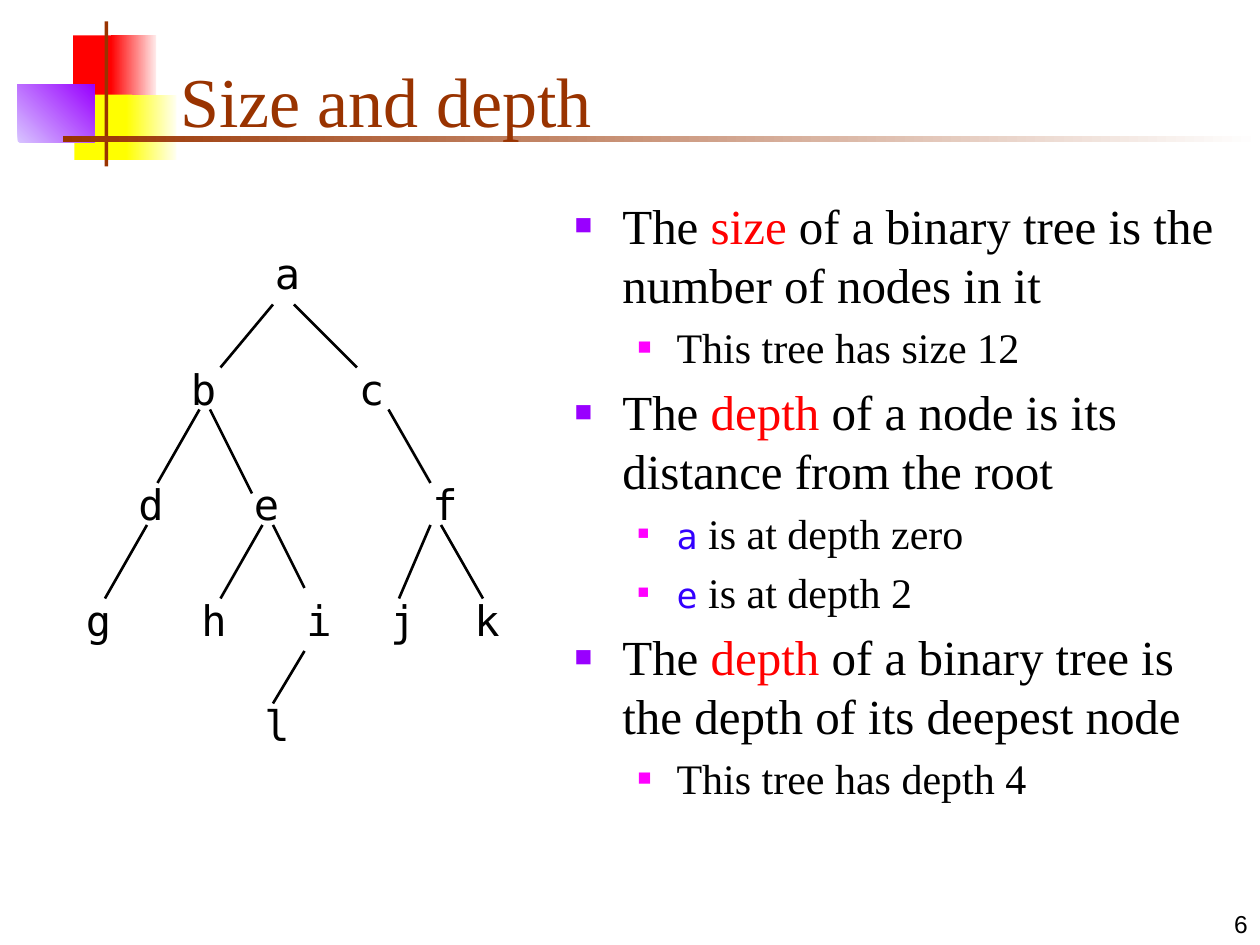
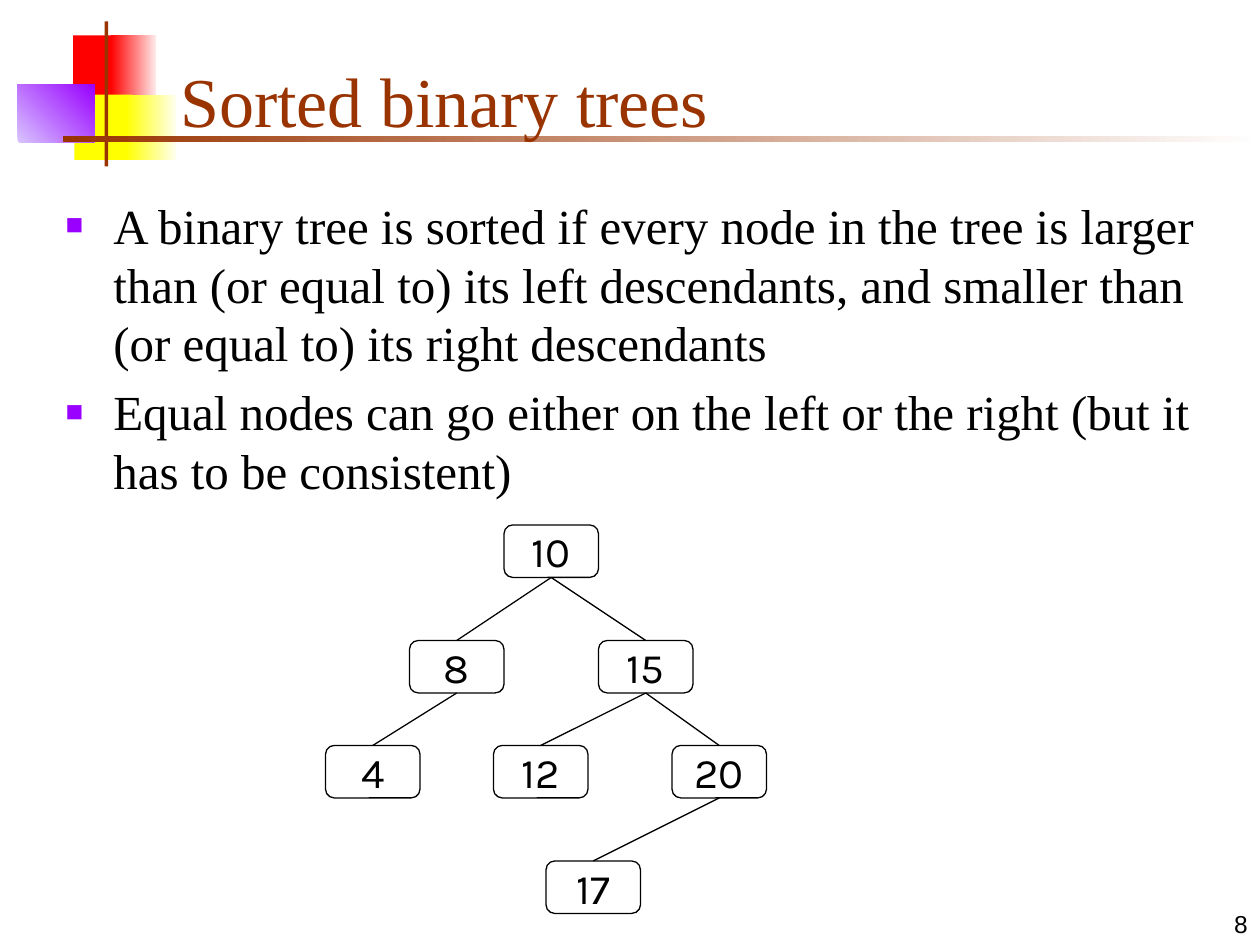
from dataclasses import dataclass

from lxml.etree import SubElement
from pptx import Presentation
from pptx.dml.color import RGBColor
from pptx.enum.shapes import MSO_CONNECTOR, MSO_SHAPE
from pptx.enum.text import MSO_ANCHOR, MSO_AUTO_SIZE, PP_ALIGN
from pptx.oxml.ns import qn
from pptx.util import Inches, Pt


@dataclass(frozen=True)
class Theme:
    text: str = "000000"
    title: str = "993300"
    keyword: str = "FF0000"
    code: str = "3300FF"
    bullets: tuple = ("9900FF", "FF00FF")
    serif: str = "Times New Roman"
    mono: str = "DejaVu Sans Mono"
    node: str = "Karla"
    number: str = "Arial"
    title_size: int = 40
    body_sizes: tuple = (28, 24)
    code_size: int = 20
    node_size: int = 24
    number_size: int = 14


THEME = Theme()

# Shared decoration: left, top, width, height, colours, gradient angle
DECORATION = [
    (0.58, 0.28, 0.35, 0.52, ["FF0000"], 0),
    (0.88, 0.28, 0.36, 0.52, ["FF0000", "FFEAEA"], 0),
    (0.59, 0.75, 0.46, 0.52, ["FFFF00"], 0),
    (1, 0.75, 0.4, 0.52, ["FFFF00", "FFFFF0"], 0),
    (0.14, 0.67, 0.61, 0.46, ["D8C4FF", "9900FF"], 45),
    (0.83, 0.17, 0.03, 1.15, [THEME.title], 0),
    (0.5, 1.08, 9.5, 0.05, [THEME.title, "FFFFFF"], 0),
]

# Lists: level, then (text, style) runs
DEPTH_POINTS = [
    (0, [("The ", "plain"), ("size", "keyword"),
         (" of a binary tree is the number of nodes in it", "plain")]),
    (1, [("This tree has size 12", "plain")]),
    (0, [("The ", "plain"), ("depth", "keyword"),
         (" of a node is its distance from the root", "plain")]),
    (1, [("a", "code"), (" is at depth zero", "plain")]),
    (1, [("e", "code"), (" is at depth 2", "plain")]),
    (0, [("The ", "plain"), ("depth", "keyword"),
         (" of a binary tree is the depth of its deepest node", "plain")]),
    (1, [("This tree has depth 4", "plain")]),
]
SORTED_POINTS = [
    (0, [("A binary tree is sorted if every node in the tree is larger than "
          "(or equal to) its left descendants, and smaller than "
          "(or equal to) its right descendants", "plain")]),
    (0, [("Equal nodes can go either on the left or the right "
          "(but it has to be consistent)", "plain")]),
]

# Trees lie on a grid of twelfths of an inch: row top -> {label: left}
LETTER_ROWS = {
    23: {"a": 25},
    34: {"b": 17, "c": 33},
    45: {"d": 12, "e": 23, "f": 40},
    56: {"g": 7, "h": 18, "i": 28, "j": 36, "k": 44},
    66: {"l": 24},
}
# Branches: start x, start y, end x, end y
LETTER_BRANCHES = [
    (26, 29, 21, 35), (28, 29, 34, 35),
    (19, 39, 15, 46), (20, 39, 24, 47), (37, 39, 41, 46),
    (14, 50, 10, 57), (25, 50, 21, 57), (26, 50, 29, 56),
    (41, 50, 38, 57), (42, 50, 46, 57), (29, 62, 26, 67),
]
NUMBER_ROWS = {
    50: {"10": 48},
    61: {"8": 39, "15": 57},
    71: {"4": 31, "12": 47, "20": 64},
    82: {"17": 52},
}
NUMBER_BRANCHES = [("10", "8"), ("10", "15"), ("8", "4"),
                   ("15", "12"), ("15", "20"), ("20", "17")]


def grid(*units):
    return [Inches(unit / 12) for unit in units]


def inches(*lengths):
    return [Inches(length) for length in lengths]


def color(value):
    return RGBColor.from_string(value)


def add_run(paragraph, text, font, size, rgb):
    run = paragraph.add_run()
    run.text = text
    run.font.name, run.font.size = font, Pt(size)
    run.font.color.rgb = color(rgb)


def place(shape, left, top, width, height):
    shape.left, shape.top, shape.width, shape.height = inches(left, top, width, height)


# Shared parts of every slide
def add_decoration(slide):
    for left, top, width, height, colors, angle in DECORATION:
        shape = slide.shapes.add_shape(
            MSO_SHAPE.RECTANGLE, *inches(left, top, width, height))
        shape.shadow.inherit = False
        shape.line.fill.background()
        if len(colors) == 1:
            shape.fill.solid()
            shape.fill.fore_color.rgb = color(colors[0])
        else:
            shape.fill.gradient()
            shape.fill.gradient_angle = angle
            for stop, value in zip(shape.fill.gradient_stops, colors):
                stop.color.rgb = color(value)


def set_bullet(paragraph, level):
    paragraph.level = level
    properties = paragraph._p.get_or_add_pPr()
    margin, hanging = [(0.38, 0.38), (0.81, 0.31)][level]
    properties.set("marL", str(Inches(margin)))
    properties.set("indent", str(-Inches(hanging)))
    bullet_color = SubElement(properties, qn("a:buClr"))
    SubElement(bullet_color, qn("a:srgbClr"), val=THEME.bullets[level])
    SubElement(properties, qn("a:buSzPct"), val=["60000", "55000"][level])
    SubElement(properties, qn("a:buFont"), typeface=THEME.number)
    SubElement(properties, qn("a:buChar"), char="■")


def fill_body(body, points):
    frame = body.text_frame
    frame.auto_size = MSO_AUTO_SIZE.NONE
    for index, (level, runs) in enumerate(points):
        paragraph = frame.add_paragraph() if index else frame.paragraphs[0]
        set_bullet(paragraph, level)
        size = THEME.body_sizes[level]
        styles = {
            "plain": (THEME.serif, size, THEME.text),
            "keyword": (THEME.serif, size, THEME.keyword),
            "code": (THEME.mono, THEME.code_size, THEME.code),
        }
        for text, style in runs:
            add_run(paragraph, text, *styles[style])


def add_slide(presentation, title_text, number, points, body_left, body_width):
    slide = presentation.slides.add_slide(presentation.slide_layouts[1])
    add_decoration(slide)
    title, body = slide.placeholders
    place(title, 1.33, 0.25, 8.52, 0.92)
    title.text_frame.auto_size = MSO_AUTO_SIZE.NONE
    title.text_frame.vertical_anchor = MSO_ANCHOR.BOTTOM
    paragraph = title.text_frame.paragraphs[0]
    paragraph.alignment = PP_ALIGN.LEFT
    add_run(paragraph, title_text, THEME.serif, THEME.title_size, THEME.title)
    place(body, body_left, 1.5, body_width, 5.21)
    fill_body(body, points)
    # Text goes in front of the decoration
    for placeholder in (title, body):
        slide.shapes._spTree.append(placeholder._element)

    number_box = slide.shapes.add_textbox(*inches(7.92, 7, 2.08, 0.5))
    frame = number_box.text_frame
    frame.word_wrap = True
    frame.vertical_anchor = MSO_ANCHOR.BOTTOM
    frame.paragraphs[0].alignment = PP_ALIGN.RIGHT
    add_run(frame.paragraphs[0], number, THEME.number, THEME.number_size, THEME.text)
    return slide


# Trees
def add_branch(slide, start_x, start_y, end_x, end_y, width):
    branch = slide.shapes.add_connector(
        MSO_CONNECTOR.STRAIGHT, start_x, start_y, end_x, end_y)
    branch.line.color.rgb = color(THEME.text)
    branch.line.width = Pt(width)
    SubElement(branch._element.spPr, qn("a:effectLst"))
    return branch


def add_letter_tree(slide):
    for top, row in LETTER_ROWS.items():
        for label, left in row.items():
            box = slide.shapes.add_textbox(*grid(left, top, 5, 6))
            box.text_frame.word_wrap = True
            add_run(box.text_frame.paragraphs[0], label,
                    THEME.mono, THEME.node_size, THEME.text)
    for ends in LETTER_BRANCHES:
        add_branch(slide, *grid(*ends), 1.5)


def add_number_tree(slide):
    nodes = {}
    for top, row in NUMBER_ROWS.items():
        for label, left in row.items():
            node = slide.shapes.add_shape(
                MSO_SHAPE.ROUNDED_RECTANGLE, *grid(left, top, 9, 5))
            node.shadow.inherit = False
            node.fill.background()
            node.line.color.rgb = color(THEME.text)
            node.line.width = Pt(0.75)
            frame = node.text_frame
            frame.word_wrap = False
            frame.vertical_anchor = MSO_ANCHOR.MIDDLE
            frame.paragraphs[0].alignment = PP_ALIGN.CENTER
            add_run(frame.paragraphs[0], label,
                    THEME.node, THEME.node_size, THEME.text)
            nodes[label] = node
    for parent, child in NUMBER_BRANCHES:
        branch = add_branch(slide, 0, 0, 0, 0, 0.75)
        branch.begin_connect(nodes[parent], 2)
        branch.end_connect(nodes[child], 0)


def main():
    presentation = Presentation()
    presentation.slide_width, presentation.slide_height = inches(10, 7.5)
    add_letter_tree(add_slide(
        presentation, "Size and depth", "6", DEPTH_POINTS, 4.46, 5.33))
    add_number_tree(add_slide(
        presentation, "Sorted binary trees", "8", SORTED_POINTS, 0.42, 9.38))
    presentation.save("out.pptx")


if __name__ == "__main__":
    main()
